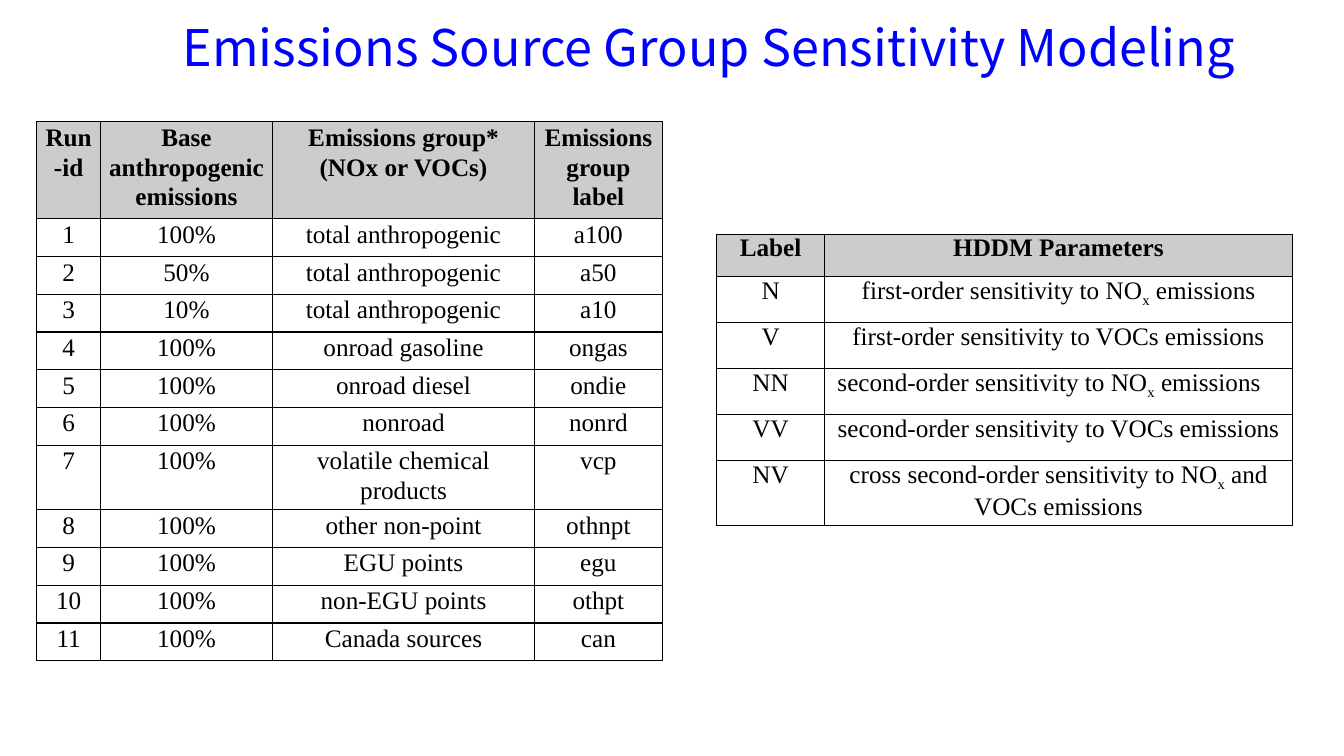
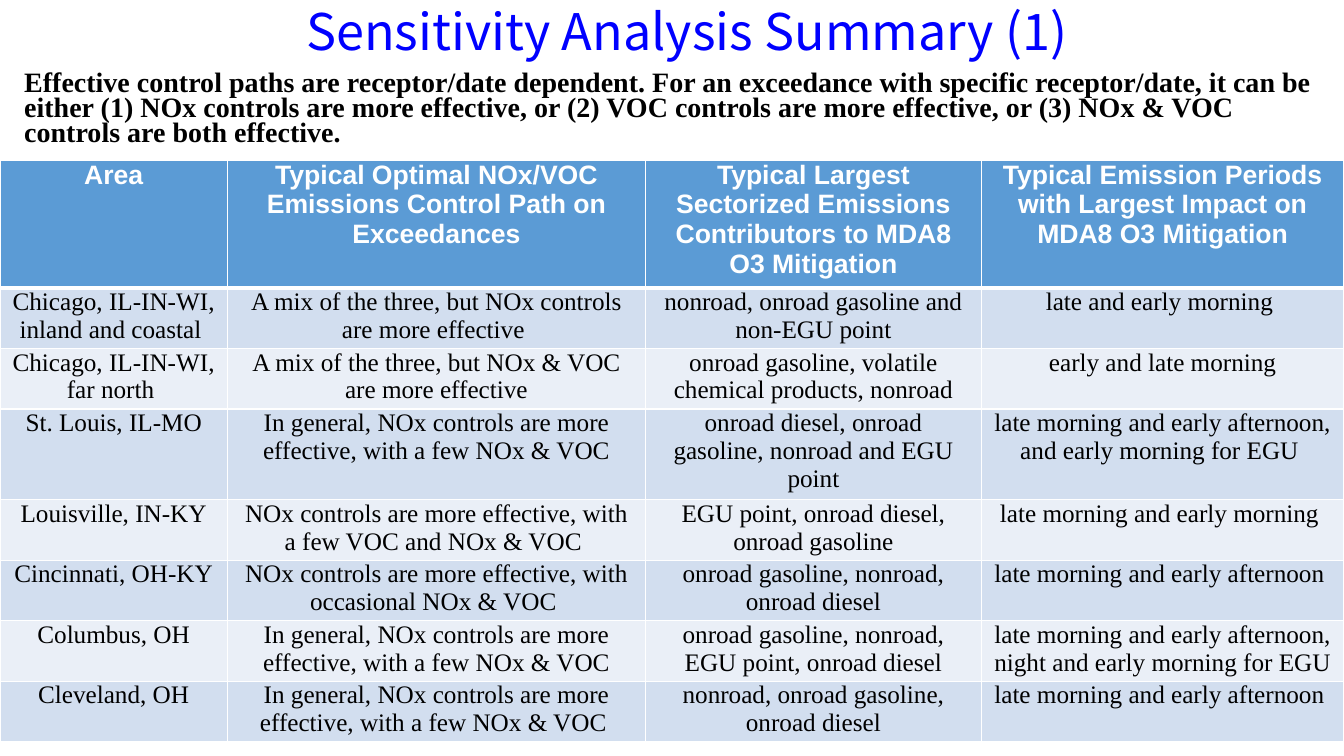
from dataclasses import dataclass

from lxml import etree
from pptx import Presentation
from pptx.dml.color import RGBColor
from pptx.enum.text import MSO_ANCHOR, PP_ALIGN
from pptx.oxml.ns import qn
from pptx.util import Cm, Pt

CENTER = PP_ALIGN.CENTER
LEFT = PP_ALIGN.LEFT
MIDDLE = MSO_ANCHOR.MIDDLE
BLANK_LAYOUT = 6


@dataclass(frozen=True)
class TextStyle:
    font: str
    size: int
    color: str
    bold: bool = False


@dataclass(frozen=True)
class TableStyle:
    header: TextStyle
    body: TextStyle
    header_fill: str
    body_fills: tuple
    border: str
    header_rule: int
    margin: float
    line_spacing: float


class Theme:
    serif = "Times New Roman"
    black = "000000"
    white = "FFFFFF"
    title = TextStyle("Noto Sans CJK SC", 36, "0000FF")
    intro = TextStyle(serif, 20, black, True)
    intro_leading = Pt(18)
    body = TextStyle(serif, 18, black)
    header = TextStyle(serif, 18, black, True)
    band_header = TextStyle("Arial", 19, white, True)
    thin_rule = 1
    subscript = "-25000"
    runs_table = TableStyle(header, body, "CCCCCC", (None,), black, 1, 0.17, 1.07)
    labels_table = TableStyle(header, body, "CCCCCC", (None,), black, 1, 0.17, 1.0)
    summary_table = TableStyle(band_header, body, "5B9BD5", ("D2DEEF", "EAEFF7"),
                               white, 3, 0.3, 1.0)


RUN_HEADER = ("Run-id", "Base anthropogenic emissions",
              "Emissions group* (NOx or VOCs)", "Emissions group label")
RUN_GROUPS = (
    ("100%", "total anthropogenic", "a100"),
    ("50%", "total anthropogenic", "a50"),
    ("10%", "total anthropogenic", "a10"),
    ("100%", "onroad gasoline", "ongas"),
    ("100%", "onroad diesel", "ondie"),
    ("100%", "nonroad", "nonrd"),
    ("100%", "volatile chemical products", "vcp"),
    ("100%", "other non-point", "othnpt"),
    ("100%", "EGU points", "egu"),
    ("100%", "non-EGU points", "othpt"),
    ("100%", "Canada sources", "can"),
)
PARAMETER_ROWS = (
    ("Label", "HDDM Parameters"),
    ("N", "first-order sensitivity to NO_x_ emissions"),
    ("V", "first-order sensitivity to VOCs emissions"),
    ("NN", "second-order sensitivity to NO_x_ emissions"),
    ("VV", "second-order sensitivity to VOCs emissions"),
    ("NV", "cross second-order sensitivity to NO_x_ and VOCs emissions"),
)
MOSTLY_NOX = "In general, NOx controls are more effective, with a few NOx & VOC"
SUMMARY_ROWS = (
    ("Area", "Typical Optimal NOx/VOC Emissions Control Path on Exceedances",
     "Typical Largest Sectorized Emissions Contributors to MDA8 O3 Mitigation",
     "Typical Emission Periods with Largest Impact on MDA8 O3 Mitigation"),
    ("Chicago, IL-IN-WI, inland and coastal ",
     "A mix of the three, but NOx controls are more effective ",
     "nonroad, onroad gasoline and non-EGU point", "late and early morning "),
    ("Chicago, IL-IN-WI, far north ",
     "A mix of the three, but NOx & VOC are more effective",
     "onroad gasoline, volatile chemical products, nonroad",
     "early and late morning"),
    ("St. Louis, IL-MO", MOSTLY_NOX,
     "onroad diesel, onroad gasoline, nonroad and EGU point",
     "late morning and early afternoon, and early morning for EGU "),
    ("Louisville, IN-KY",
     "NOx controls are more effective, with a few VOC and NOx & VOC ",
     "EGU point, onroad diesel, onroad gasoline",
     "late morning and early morning "),
    ("Cincinnati, OH-KY",
     "NOx controls are more effective, with occasional NOx & VOC ",
     "onroad gasoline, nonroad, onroad diesel",
     "late morning and early afternoon "),
    ("Columbus, OH", MOSTLY_NOX,
     "onroad gasoline, nonroad, EGU point, onroad diesel",
     "late morning and early afternoon, night and early morning for EGU "),
    ("Cleveland, OH", MOSTLY_NOX + " ", "nonroad, onroad gasoline, onroad diesel",
     "late morning and early afternoon "),
)
INTRO = ("Effective control paths are receptor/date dependent. For an exceedance "
         "with specific receptor/date, it can be either (1) NOx controls are more "
         "effective, or (2) VOC controls are more effective, or (3) NOx & VOC "
         "controls are both effective.")


def add_runs(paragraph, text, style):
    for index, part in enumerate(text.split("_")):
        run = paragraph.add_run()
        run.text = part
        run.font.name = style.font
        run.font.size = Pt(style.size)
        run.font.bold = style.bold
        run.font.color.rgb = RGBColor.from_string(style.color)
        if index % 2:
            run._r.get_or_add_rPr().set("baseline", Theme.subscript)


def add_text(slide, box, text, style, leading=1.0):
    shape = slide.shapes.add_textbox(*(Cm(length) for length in box))
    frame = shape.text_frame
    frame.word_wrap = True
    frame.vertical_anchor = MIDDLE
    paragraph = frame.paragraphs[0]
    paragraph.alignment = LEFT
    paragraph.line_spacing = leading
    add_runs(paragraph, text, style)


def set_borders(cell, color, top, bottom):
    properties = cell._tc.get_or_add_tcPr()
    widths = {"a:lnL": Theme.thin_rule, "a:lnR": Theme.thin_rule,
              "a:lnT": top, "a:lnB": bottom}
    for tag, width in widths.items():
        line = etree.SubElement(properties, qn(tag), w=str(Pt(width)))
        fill = etree.SubElement(line, qn("a:solidFill"))
        etree.SubElement(fill, qn("a:srgbClr"), val=color)


def fill_cell(cell, text, row, style):
    is_header = row == 0
    cell.margin_left = cell.margin_right = Cm(style.margin)
    cell.margin_top = cell.margin_bottom = 0
    set_borders(cell, style.border,
                style.header_rule if row == 1 else Theme.thin_rule,
                style.header_rule if is_header else Theme.thin_rule)
    fills = style.body_fills
    color = style.header_fill if is_header else fills[(row - 1) % len(fills)]
    if color:
        cell.fill.solid()
        cell.fill.fore_color.rgb = RGBColor.from_string(color)
    else:
        cell.fill.background()
    paragraph = cell.text_frame.paragraphs[0]
    paragraph.alignment = CENTER
    paragraph.line_spacing = style.line_spacing
    add_runs(paragraph, text, style.header if is_header else style.body)


def add_grid(slide, left, top, widths, header_height, row_height, rows, style):
    heights = [header_height] + [row_height] * (len(rows) - 1)
    table = slide.shapes.add_table(len(rows), len(widths), Cm(left), Cm(top),
                                   Cm(sum(widths)), Cm(sum(heights))).table
    table.first_row = False
    table.horz_banding = False
    for column, width in zip(table.columns, widths):
        column.width = Cm(width)
    for row, (height, texts) in enumerate(zip(heights, rows)):
        table.rows[row].height = Cm(height)
        for column, text in enumerate(texts):
            fill_cell(table.cell(row, column), text, row, style)
    return table


def add_slide(presentation, title, title_box):
    slide = presentation.slides.add_slide(presentation.slide_layouts[BLANK_LAYOUT])
    add_text(slide, title_box, title, Theme.title)
    return slide


def build_modeling_slide(presentation):
    slide = add_slide(presentation, "Emissions Source Group Sensitivity Modeling",
                      (4.35, 0, 27.5, 2.34))
    numbered = [(str(number), *group) for number, group in enumerate(RUN_GROUPS, 1)]
    add_grid(slide, 0.93, 3.07, (1.6, 4.34, 6.6, 3.22), 1.8, 0.95,
             [RUN_HEADER, *numbered], Theme.runs_table)
    parameters = add_grid(slide, 18.06, 5.9, (2.72, 11.79), 1.07, 1.16,
                          PARAMETER_ROWS, Theme.labels_table)
    parameters.cell(3, 1).margin_right = Cm(0.65)


def build_summary_slide(presentation):
    slide = add_slide(presentation, "Sensitivity Analysis Summary (1)",
                      (7.47, 0, 19.96, 1.52))
    add_grid(slide, 0, 4.04, (5.73, 10.54, 8.46, 9.14), 2.36, 1.45,
             SUMMARY_ROWS, Theme.summary_table)
    add_text(slide, (0.36, 1.83, 33.15, 1.9), INTRO, Theme.intro,
             Theme.intro_leading)


def main():
    presentation = Presentation()
    presentation.slide_width = Cm(33.87)
    presentation.slide_height = Cm(19.05)
    build_modeling_slide(presentation)
    build_summary_slide(presentation)
    presentation.save("out.pptx")


if __name__ == "__main__":
    main()
